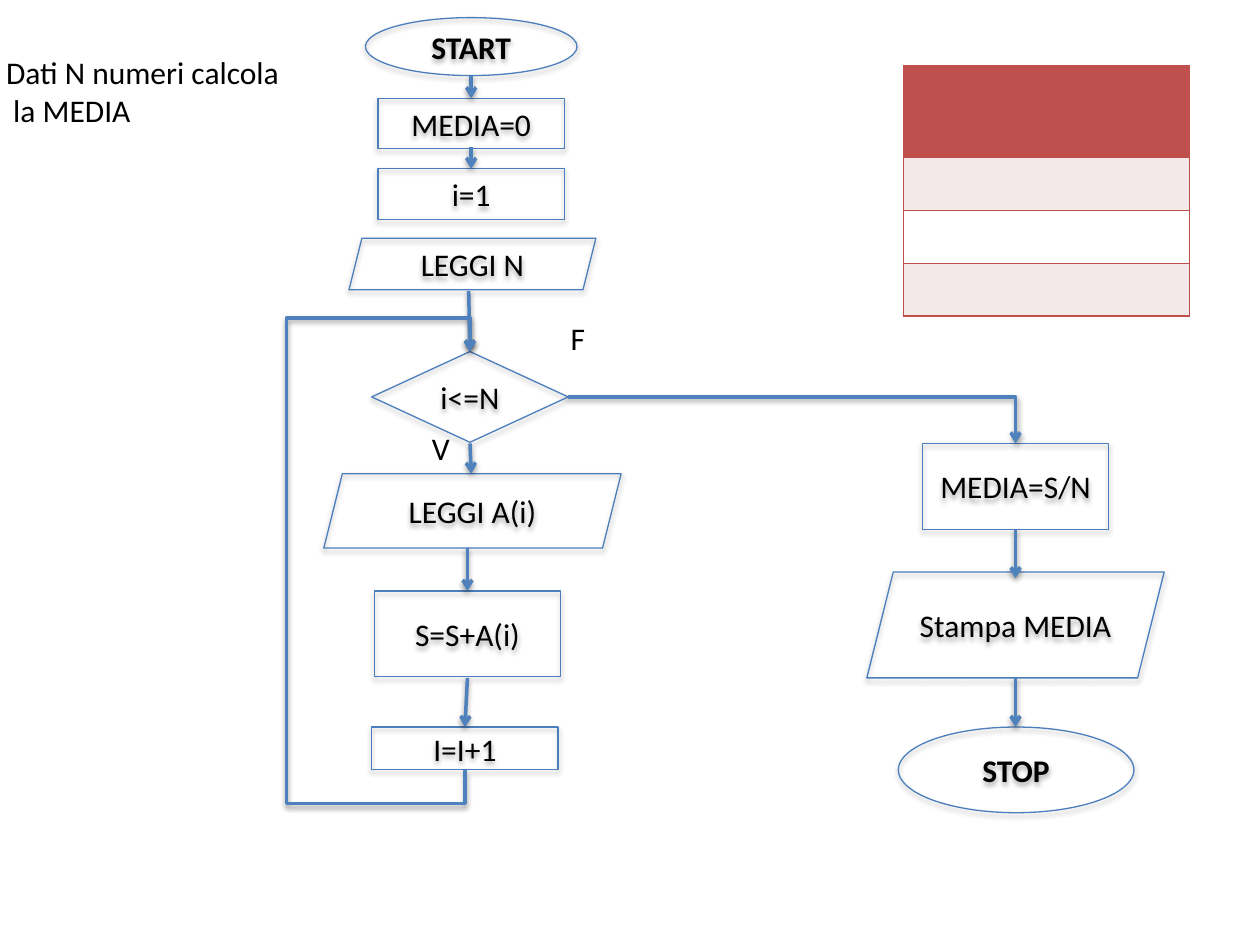
from lxml.etree import SubElement as Sub
from pptx import Presentation
from pptx.dml.color import RGBColor
from pptx.enum.shapes import MSO_CONNECTOR as Link, MSO_SHAPE as Form
from pptx.enum.text import MSO_ANCHOR as Anchor, PP_ALIGN as Align
from pptx.oxml.ns import qn
from pptx.util import Inches, Pt

HUES = {"edge": "4B7EBC", "link": "4F81BD", "text": "000000",
        "head": "C0504D", "band": "F4E9E9", "plain": "FFFFFF"}


def rgb(name):
    return RGBColor.from_string(HUES[name])


class Chart:
    """Flowchart style and the slide it is drawn on."""
    font, size = "Calibri", 18

    def __init__(self, slide):
        self.slide = slide
        self.shapes = slide.shapes

    def style(self, frame, bold=False):
        for par in frame.paragraphs:
            for run in par.runs:
                run.font.name, run.font.size = self.font, Pt(self.size)
                run.font.bold = bold
                run.font.color.rgb = rgb("text")

    def shade(self, effects, dist, alpha):
        """Add a soft shadow that falls straight down."""
        cast = Sub(effects, qn("a:outerShdw"), blurRad=str(Pt(3.1)),
                   dist=str(Pt(dist)), dir="5400000", rotWithShape="0")
        hue = Sub(cast, qn("a:srgbClr"), val=HUES["text"])
        Sub(hue, qn("a:alpha"), val=str(alpha * 1000))

    def step(self, form, text, x, y, w, h, bold=False):
        box = self.shapes.add_shape(form, Inches(x), Inches(y), Inches(w), Inches(h))
        box.fill.background()
        box.line.color.rgb = rgb("edge")
        box.line.width = Pt(0.75)
        box.shadow.inherit = False
        self.shade(box._element.spPr.find(qn("a:effectLst")), 1.8, 35)
        frame = box.text_frame
        frame.text = text
        frame.word_wrap = True
        frame.vertical_anchor = Anchor.MIDDLE
        frame.paragraphs[0].alignment = Align.CENTER
        self.style(frame, bold)

    def note(self, text, x, y, w, h):
        box = self.shapes.add_textbox(Inches(x), Inches(y), Inches(w), Inches(h))
        box.text_frame.text = text
        box.text_frame.word_wrap = False
        self.style(box.text_frame)

    def arrow(self, x1, y1, x2, y2, kind=Link.STRAIGHT):
        line = self.shapes.add_connector(
            kind, Inches(x1), Inches(y1), Inches(x2), Inches(y2))
        line.line.color.rgb = rgb("link")
        line.line.width = Pt(2)
        Sub(line.line._get_or_add_ln(), qn("a:tailEnd"), type="arrow")
        self.shade(Sub(line._element.spPr, qn("a:effectLst")), 1.6, 38)
        return line

    def bend(self, x1, y1, x2, y2, bends, turn=0, shifts=()):
        """Draw an elbow arrow; its box is given before the turn."""
        line = self.arrow(x1, y1, x2, y2, Link.ELBOW)
        line.rotation = turn
        props = line._element.spPr
        if turn:
            props.find(qn("a:xfrm")).set("rot", str(turn * 60000))
        geom = props.find(qn("a:prstGeom"))
        geom.set("prst", f"bentConnector{bends}")
        guides = geom.find(qn("a:avLst"))
        if guides is None:
            guides = Sub(geom, qn("a:avLst"))
        for num, shift in enumerate(shifts, 1):
            Sub(guides, qn("a:gd"), name=f"adj{num}",
                fmla=f"val {round(shift * 100000)}")

    def rule(self, cell, side, shown):
        line = Sub(cell._tc.get_or_add_tcPr(), qn(f"a:ln{side}"), w=str(Pt(1)))
        if shown:
            fill = Sub(line, qn("a:solidFill"))
            Sub(fill, qn("a:srgbClr"), val=HUES["head"])
        else:
            Sub(line, qn("a:noFill"))

    def grid(self, x, y, w, rows, cols):
        """Draw an empty banded table; rows holds (height, fill) pairs."""
        high = sum(size for size, _ in rows)
        table = self.shapes.add_table(len(rows), cols, Inches(x), Inches(y),
                                      Inches(w), Inches(high)).table
        for r, (size, fill) in enumerate(rows):
            table.rows[r].height = Inches(size)
            for c in range(cols):
                cell = table.cell(r, c)
                shown = {"L": c == 0, "R": c == cols - 1, "T": True, "B": True}
                for side, on in shown.items():
                    self.rule(cell, side, on)
                cell.fill.solid()
                cell.fill.fore_color.rgb = rgb(fill)


STEPS = [
    (Form.OVAL, "START", 2.9, 0.14, 1.68, 0.46, True),
    (Form.RECTANGLE, "MEDIA=0", 3, 0.78, 1.48, 0.4),
    (Form.RECTANGLE, "i=1", 3, 1.34, 1.48, 0.4),
    (Form.PARALLELOGRAM, "LEGGI N", 2.77, 1.89, 1.96, 0.41),
    (Form.DIAMOND, "i<=N", 2.95, 2.79, 1.56, 0.72),
    (Form.PARALLELOGRAM, "LEGGI A(i)", 2.57, 3.76, 2.36, 0.59),
    (Form.RECTANGLE, "S=S+A(i)", 2.97, 4.69, 1.48, 0.68),
    (Form.RECTANGLE, "I=I+1", 2.95, 5.77, 1.48, 0.34),
    (Form.RECTANGLE, "MEDIA=S/N", 7.32, 3.52, 1.48, 0.68),
    (Form.PARALLELOGRAM, "Stampa MEDIA", 6.88, 4.54, 2.36, 0.84),
    (Form.OVAL, "STOP", 7.13, 5.77, 1.87, 0.68, True),
]
ARROWS = [
    (3.74, 0.6, 3.74, 0.78), (3.74, 1.17, 3.74, 1.34),
    (3.72, 2.31, 3.73, 2.79), (3.73, 3.52, 3.74, 3.76),
    (3.71, 4.35, 3.71, 4.69), (3.71, 5.38, 3.69, 5.77),
    (8.06, 4.2, 8.06, 4.59), (8.06, 5.38, 8.06, 5.77),
]
NOTES = [
    ("Dati N numeri calcola\n la MEDIA", -0.05, 0.37, 2.39, 0.71),
    ("V", 3.33, 3.36, 0.35, 0.4),
    ("F", 4.43, 2.48, 0.32, 0.4),
]
ROWS = [(0.73, "head"), (0.42, "band"), (0.42, "plain"), (0.42, "band")]


def main():
    deck = Presentation()
    deck.slide_width, deck.slide_height = Inches(10), Inches(7.5)
    chart = Chart(deck.slides.add_slide(deck.slide_layouts[6]))
    for step in STEPS:
        chart.step(*step)
    for ends in ARROWS:
        chart.arrow(*ends)
    chart.bend(4.51, 3.15, 8.06, 3.52, 2)
    chart.bend(5.37, 4.47, 2.05, 4.43, 5, 90, (-0.08, -35.25, 1.08))
    for note in NOTES:
        chart.note(*note)
    chart.grid(7.17, 0.52, 2.27, ROWS, 3)
    deck.save("out.pptx")


if __name__ == "__main__":
    main()
